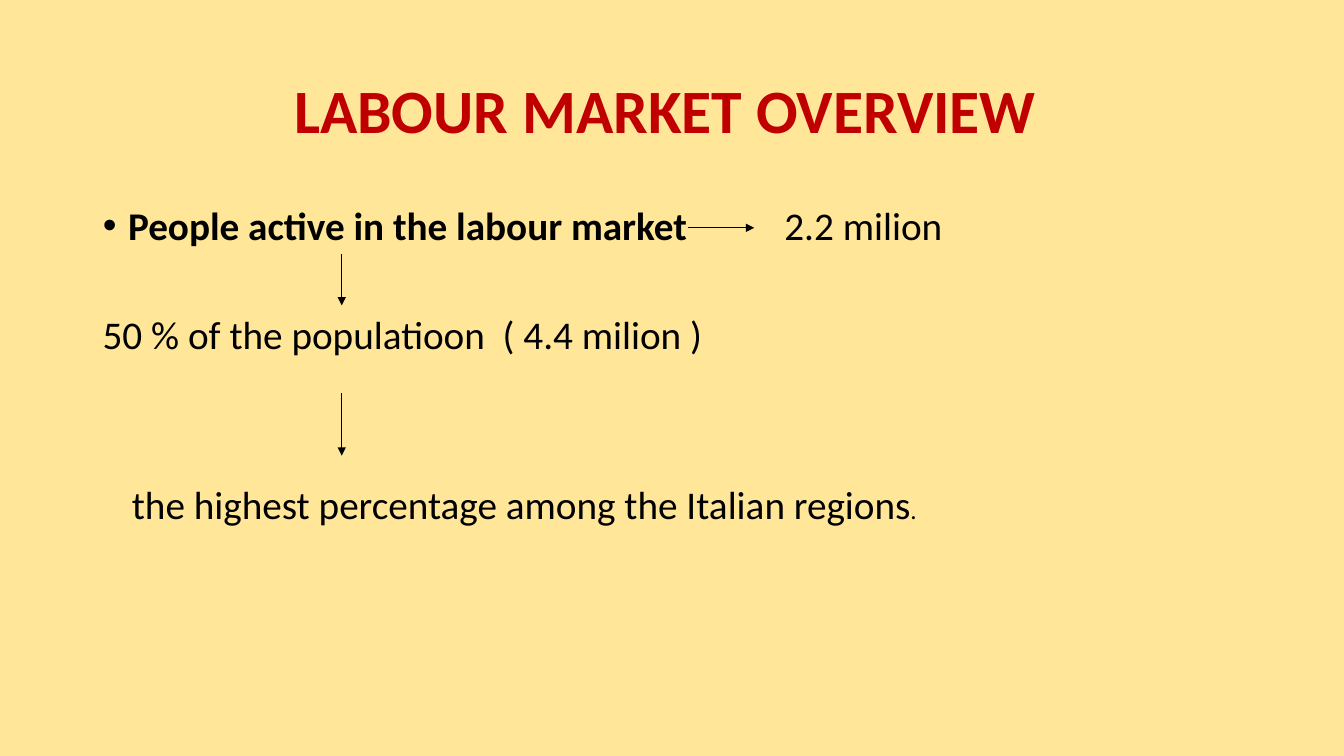
from dataclasses import dataclass

from lxml.etree import SubElement
from pptx import Presentation
from pptx.dml.color import RGBColor
from pptx.enum.shapes import MSO_CONNECTOR
from pptx.enum.text import MSO_ANCHOR, MSO_AUTO_SIZE, PP_ALIGN
from pptx.oxml.ns import qn
from pptx.util import Inches, Pt


@dataclass(frozen=True)
class Theme:
    font: str = "Calibri"
    background: RGBColor = RGBColor(0xFF, 0xE6, 0x99)
    heading: RGBColor = RGBColor(0xC0, 0x00, 0x00)
    ink: RGBColor = RGBColor(0, 0, 0)
    title_size: int = 44
    text_size: int = 28
    small_size: int = 18
    line_width: float = 0.5


THEME = Theme()


def place(shape, box):
    shape.left, shape.top, shape.width, shape.height = map(Inches, box)


def add_run(paragraph, text, size=THEME.text_size, color=THEME.ink, bold=False):
    run = paragraph.add_run()
    run.text = text
    run.font.name = THEME.font
    run.font.size = Pt(size)
    run.font.bold = bold
    run.font.color.rgb = color


def add_title(slide, box, text):
    title = slide.shapes.title
    place(title, box)
    frame = title.text_frame
    frame.auto_size = MSO_AUTO_SIZE.NONE
    frame.vertical_anchor = MSO_ANCHOR.MIDDLE
    paragraph = frame.paragraphs[0]
    paragraph.alignment = PP_ALIGN.CENTER
    paragraph.line_spacing = 0.9
    add_run(paragraph, text, THEME.title_size, THEME.heading, True)


def add_key_figure(slide, box, label, value, value_offset):
    body = slide.placeholders[1]
    place(body, box)
    body.text_frame.auto_size = MSO_AUTO_SIZE.NONE
    paragraph = body.text_frame.paragraphs[0]
    paragraph.line_spacing = 0.9
    paragraph.space_before = Pt(0)
    properties = paragraph._p.get_or_add_pPr()
    properties.set("marL", str(Inches(0.25)))
    properties.set("indent", str(-Inches(0.25)))
    SubElement(properties, qn("a:buChar"), char="•")
    tabs = SubElement(properties, qn("a:tabLst"))
    SubElement(tabs, qn("a:tab"), pos=str(Inches(value_offset)), algn="l")
    add_run(paragraph, label, bold=True)
    add_run(paragraph, "\t" + value)


def add_statement(slide, box, text, ending=""):
    textbox = slide.shapes.add_textbox(*map(Inches, box))
    textbox.text_frame.word_wrap = True
    paragraph = textbox.text_frame.paragraphs[0]
    add_run(paragraph, text)
    if ending:
        add_run(paragraph, ending, THEME.small_size)


def add_arrow(slide, start, end):
    arrow = slide.shapes.add_connector(
        MSO_CONNECTOR.STRAIGHT, *map(Inches, start + end)
    )
    arrow.line.color.rgb = THEME.ink
    arrow.line.width = Pt(THEME.line_width)
    SubElement(arrow.line._get_or_add_ln(), qn("a:tailEnd"), type="triangle")
    SubElement(arrow._element.spPr, qn("a:effectLst"))


def add_flow(slide, box):
    left, top, width, height = box
    add_key_figure(
        slide, box, "People active in the labour market", "2.2 milion", 6.76
    )
    add_arrow(slide, (left + 5.9, top + 0.26), (left + 6.56, top + 0.26))
    arrow_x = left + 2.47
    for start, end in ((0.52, 1.03), (1.9, 2.52)):
        add_arrow(slide, (arrow_x, top + start), (arrow_x, top + end))
    add_statement(
        slide,
        (left, top + 1.03, 6.22, 0.57),
        "50 % of the populatioon  ( 4.4 milion )",
    )
    add_statement(
        slide,
        (left + 0.29, top + 2.72, 8.13, 0.57),
        "the highest percentage among the Italian regions",
        ".",
    )


def main():
    presentation = Presentation()
    presentation.slide_width = Inches(13.33)
    presentation.slide_height = Inches(7.5)
    slide = presentation.slides.add_slide(presentation.slide_layouts[1])
    slide.background.fill.solid()
    slide.background.fill.fore_color.rgb = THEME.background
    add_title(slide, (0.92, 0.4, 11.5, 1.45), "LABOUR MARKET OVERVIEW ")
    add_flow(slide, (0.92, 2, 11.5, 4.76))
    presentation.save("out.pptx")


if __name__ == "__main__":
    main()
